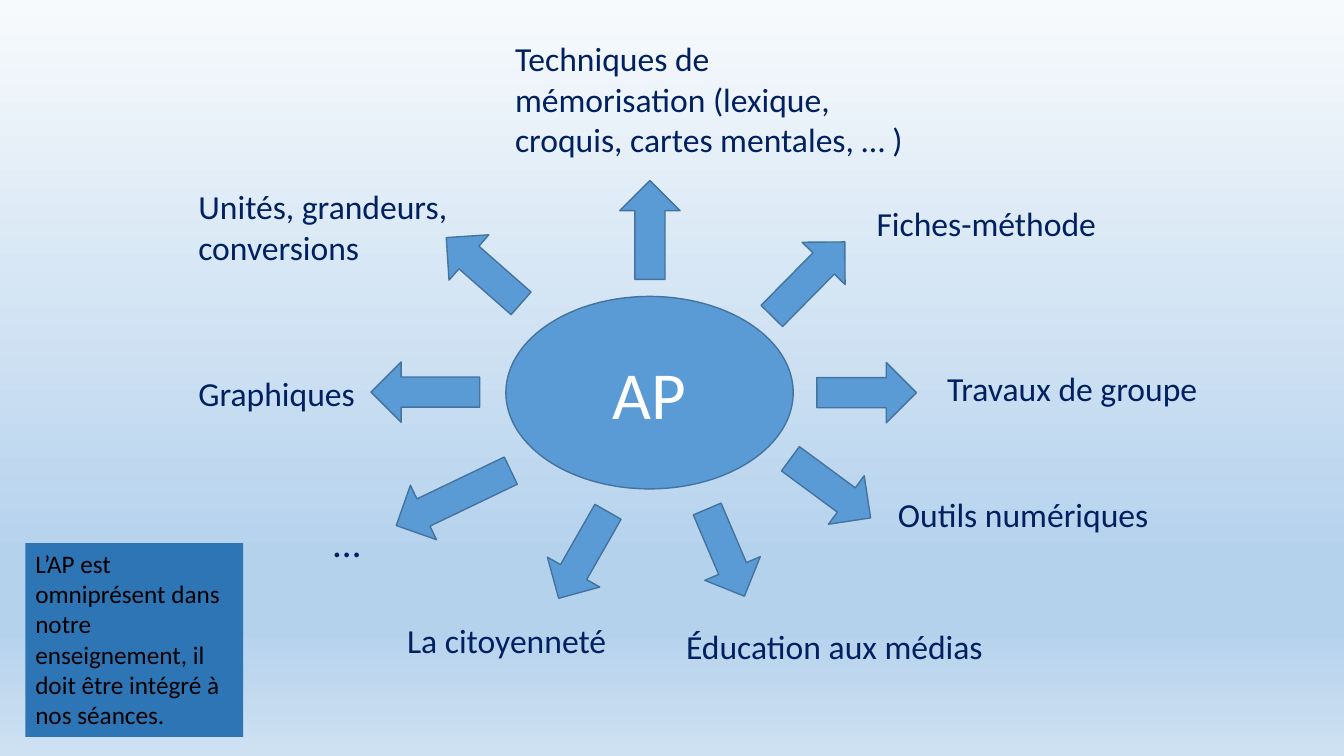
"""Mind map slide: the AP at the centre, its themes around it."""
from lxml.etree import SubElement
from pptx import Presentation
from pptx.dml.color import RGBColor
from pptx.enum.shapes import MSO_SHAPE as Preset
from pptx.enum.text import MSO_ANCHOR as Anchor, MSO_AUTO_SIZE as AutoSize, PP_ALIGN as Align
from pptx.oxml.ns import qn
from pptx.util import Cm, Pt

BLUE = RGBColor(0x5B, 0x9B, 0xD5)
OUTLINE = RGBColor(0x43, 0x73, 0x9E)
NOTE_BLUE = RGBColor(0x2E, 0x75, 0xB6)
NAVY = RGBColor(0x00, 0x20, 0x60)
WHITE = RGBColor(0xFF, 0xFF, 0xFF)
BLACK = RGBColor(0x00, 0x00, 0x00)
PALE = RGBColor(0xF7, 0xFA, 0xFD)
SKY = RGBColor(0xB5, 0xD2, 0xEC)
MIST = RGBColor(0xCE, 0xE1, 0xF2)

BACKGROUND_STOPS = [(0, PALE), (74, SKY), (83, SKY), (100, MIST)]
ARROW_WIDTH = 1.52

# left, top, length, rotation
ARROWS = [
    (15.62, 4.55, 2.49, 0),
    (19.61, 5.72, 2.62, 44.6),
    (21.08, 8.64, 2.51, 90),
    (20.17, 11.05, 2.51, 126.4),
    (17.53, 12.73, 2.39, 156.9),
    (13.94, 12.73, 2.51, 209.7),
    (10.67, 10.95, 3.2, 244.4),
    (9.96, 8.51, 2.74, 270),
    (11.43, 5.56, 2.51, 311.3),
]

# text, left, top, width, height, size
THEMES = [
    ("Techniques de mémorisation (lexique, croquis, cartes mentales, … )",
     12.73, 0.84, 10.36, 3.33, 24),
    ("Fiches-méthode", 21.84, 4.98, 6.65, 1.27, 24),
    ("Travaux de groupe", 23.62, 9.14, 7.06, 1.27, 24),
    ("Outils numériques", 22.38, 12.32, 7.01, 1.27, 24),
    ("Éducation aux médias", 17.04, 15.65, 9.25, 1.27, 24),
    ("La citoyenneté", 10.01, 15.49, 5.99, 1.27, 24),
    ("…", 8.15, 12.93, 3, 1.45, 28),
    ("Graphiques", 4.75, 9.27, 5.99, 1.27, 24),
    ("Unités, grandeurs, conversions", 4.75, 4.57, 7.98, 2.31, 24),
]

deck = Presentation()
deck.slide_width, deck.slide_height = Cm(33.87), Cm(19.05)
page = deck.slides.add_slide(deck.slide_layouts[6])


def add_figure(preset, left, top, width, height, fill, outline=None):
    figure = page.shapes.add_shape(preset, Cm(left), Cm(top), Cm(width), Cm(height))
    figure.shadow.inherit = False
    figure.fill.solid()
    figure.fill.fore_color.rgb = fill
    if outline is None:
        figure.line.fill.background()
    else:
        figure.line.color.rgb = outline
        figure.line.width = Pt(1)
    return figure


def write(box, text, size, color, align=Align.LEFT, anchor=Anchor.TOP):
    frame = box.text_frame
    frame.word_wrap = True
    frame.vertical_anchor = anchor
    para = frame.paragraphs[0]
    para.text = text
    para.alignment = align
    para.font.name = "Calibri"
    para.font.size = Pt(size)
    para.font.color.rgb = color


background = page.background.fill
background.gradient()
background.gradient_angle = 270
stop_list = page.element.find(".//" + qn("a:gsLst"))
stop_list.clear()
for percent, color in BACKGROUND_STOPS:
    stop = SubElement(stop_list, qn("a:gs"), pos=str(percent * 1000))
    SubElement(stop, qn("a:srgbClr"), val=str(color))

hub = add_figure(Preset.OVAL, 12.75, 7.47, 7.24, 4.85, BLUE, OUTLINE)
write(hub, "AP", 48, WHITE, Align.CENTER, Anchor.MIDDLE)

for left, top, length, rotation in ARROWS:
    arrow = add_figure(Preset.UP_ARROW, left, top, ARROW_WIDTH, length, BLUE, OUTLINE)
    arrow.rotation = rotation

for text, left, top, width, height, size in THEMES:
    label = page.shapes.add_textbox(Cm(left), Cm(top), Cm(width), Cm(height))
    write(label, text, size, NAVY)
    label.text_frame.auto_size = AutoSize.SHAPE_TO_FIT_TEXT

note = add_figure(Preset.RECTANGLE, 0.64, 13.69, 5.49, 4.88, NOTE_BLUE)
write(note, "L’AP est omniprésent dans notre enseignement, il doit être intégré à nos séances.",
      18, BLACK)
note.text_frame.auto_size = AutoSize.SHAPE_TO_FIT_TEXT

deck.save("out.pptx")
